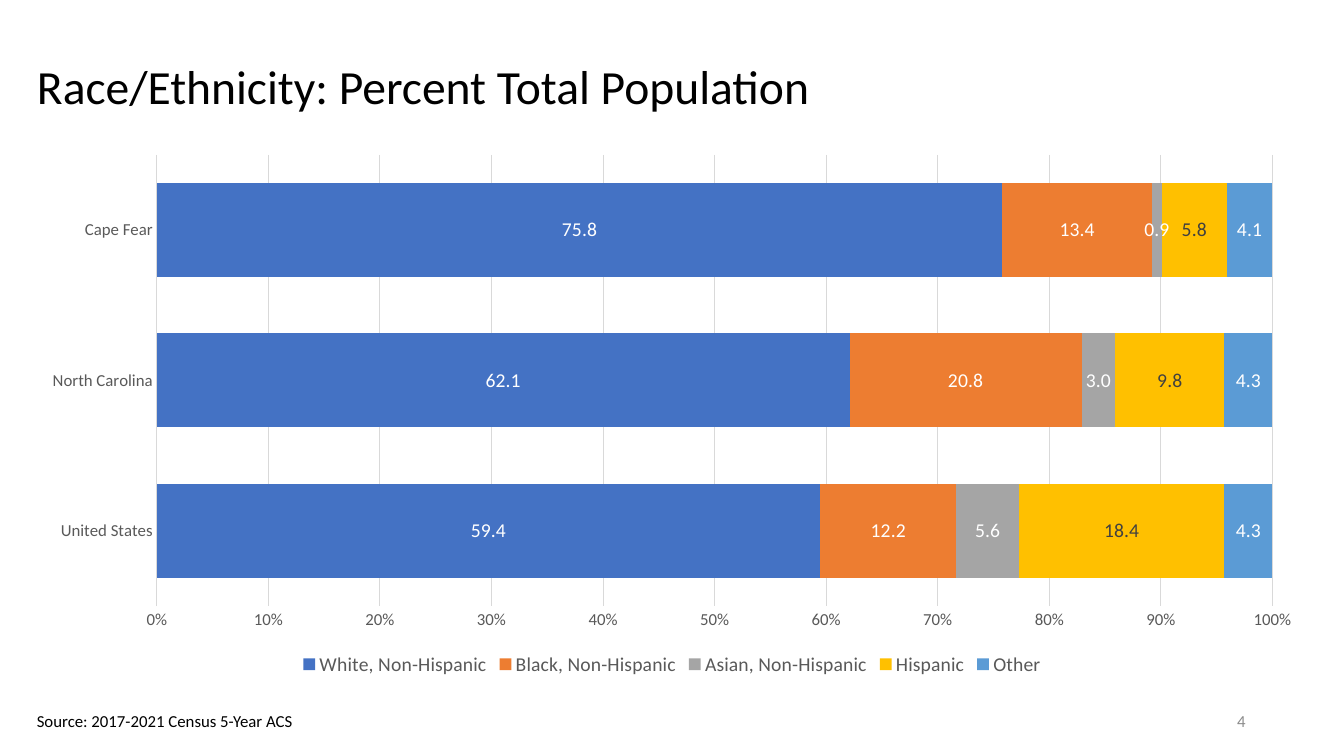
from dataclasses import dataclass
from pptx import Presentation
from pptx import util as u
from pptx.chart.data import CategoryChartData
from pptx.dml.color import RGBColor
from pptx.enum import chart as ch, text


@dataclass(frozen=True)
class Theme:
    font: str = "Calibri"
    ink: str = "000000"
    grey: str = "595959"
    pale: str = "8C8C8C"
    grid: str = "D9D9D9"
    white: str = "FFFFFF"
    dark: str = "404040"
    title: int = 34
    label: int = 14
    small: int = 12


T = Theme()
W, H = 13.33, 7.5
MARGIN = 0.02 * W
CONTENT_W = W - 2 * MARGIN

REGIONS = ["United States", "North Carolina", "Cape Fear"]
# name, values by region, fill, label colour
GROUPS = [
    ("White, Non-Hispanic", (59.4, 62.1, 75.8), "4472C4", T.white),
    ("Black, Non-Hispanic", (12.2, 20.8, 13.4), "ED7D31", T.white),
    ("Asian, Non-Hispanic", (5.6, 3.0, 0.9), "A5A5A5", T.white),
    ("Hispanic", (18.4, 9.8, 5.8), "FFC000", T.dark),
    ("Other", (4.3, 4.3, 4.1), "5B9BD5", T.white),
]


def style(font, size, color):
    font.name = T.font
    font.size = u.Pt(size)
    font.bold = False
    font.color.rgb = RGBColor.from_string(color)


def inches(box):
    return [u.Inches(v) for v in box]


def add_run(p, words, size, color):
    r = p.add_run()
    r.text = words
    style(r.font, size, color)


def add_title(s, box, words):
    sp = s.shapes.title
    sp.left, sp.top, sp.width, sp.height = inches(box)
    tf = sp.text_frame
    tf.word_wrap = True
    tf.vertical_anchor = text.MSO_ANCHOR.MIDDLE
    p = tf.paragraphs[0]
    p.alignment = text.PP_ALIGN.LEFT
    p.line_spacing = 0.9
    add_run(p, words, T.title, T.ink)


def add_note(s, box, words, color, align, wrap):
    tf = s.shapes.add_textbox(*inches(box)).text_frame
    tf.word_wrap = wrap
    tf.vertical_anchor = text.MSO_ANCHOR.MIDDLE
    p = tf.paragraphs[0]
    p.alignment = align
    add_run(p, words, T.small, color)


def add_population_chart(s, box):
    data = CategoryChartData(number_format="#,##0.0")
    data.categories = REGIONS
    for name, values, _, _ in GROUPS:
        data.add_series(name, values)
    chart = s.shapes.add_chart(ch.XL_CHART_TYPE.BAR_STACKED_100, *inches(box), data).chart
    style(chart.font, 10, T.ink)
    chart.has_title = False

    # Legend
    chart.has_legend = True
    chart.legend.position = ch.XL_LEGEND_POSITION.BOTTOM
    chart.legend.include_in_layout = False
    style(chart.legend.font, T.label, T.grey)

    # Axes
    for axis in (chart.category_axis, chart.value_axis):
        axis.major_tick_mark = axis.minor_tick_mark = ch.XL_TICK_MARK.NONE
        style(axis.tick_labels.font, T.small, T.grey)
    value_axis = chart.value_axis
    value_axis.tick_labels.number_format = "0%"
    value_axis.tick_labels.number_format_is_linked = False
    value_axis.has_major_gridlines = True
    value_axis.format.line.fill.background()
    for line in (chart.category_axis.format.line, value_axis.major_gridlines.format.line):
        line.color.rgb = RGBColor.from_string(T.grid)
        line.width = u.Pt(0.75)

    # Bars and their labels
    plot = chart.plots[0]
    plot.gap_width = 60
    plot.overlap = 100
    plot.vary_by_categories = False
    for series, (_, _, fill, label_color) in zip(plot.series, GROUPS):
        series.format.fill.solid()
        series.format.fill.fore_color.rgb = RGBColor.from_string(fill)
        labels = series.data_labels
        labels.show_value = True
        labels.number_format = "#,##0.0"
        labels.number_format_is_linked = False
        style(labels.font, T.label, label_color)


def add_footer(s, box):
    left, top, width, height = box
    add_note(s, (left, top, 2.78, height), "Source: 2017-2021 Census 5-Year ACS",
             T.ink, text.PP_ALIGN.LEFT, False)
    number_w = 3
    add_note(s, (left + width - number_w - 0.61, top, number_w, height), "4",
             T.pale, text.PP_ALIGN.RIGHT, True)


def main():
    prs = Presentation()
    prs.slide_width, prs.slide_height = u.Inches(W), u.Inches(H)
    s = prs.slides.add_slide(prs.slide_layouts[5])
    add_population_chart(s, (MARGIN, 1.43, CONTENT_W, 5.32))
    add_title(s, (MARGIN, 0.34, CONTENT_W, 1.09), "Race/Ethnicity: Percent Total Population")
    add_footer(s, (MARGIN, 7, CONTENT_W, 0.3))
    prs.save("out.pptx")


if __name__ == "__main__":
    main()
